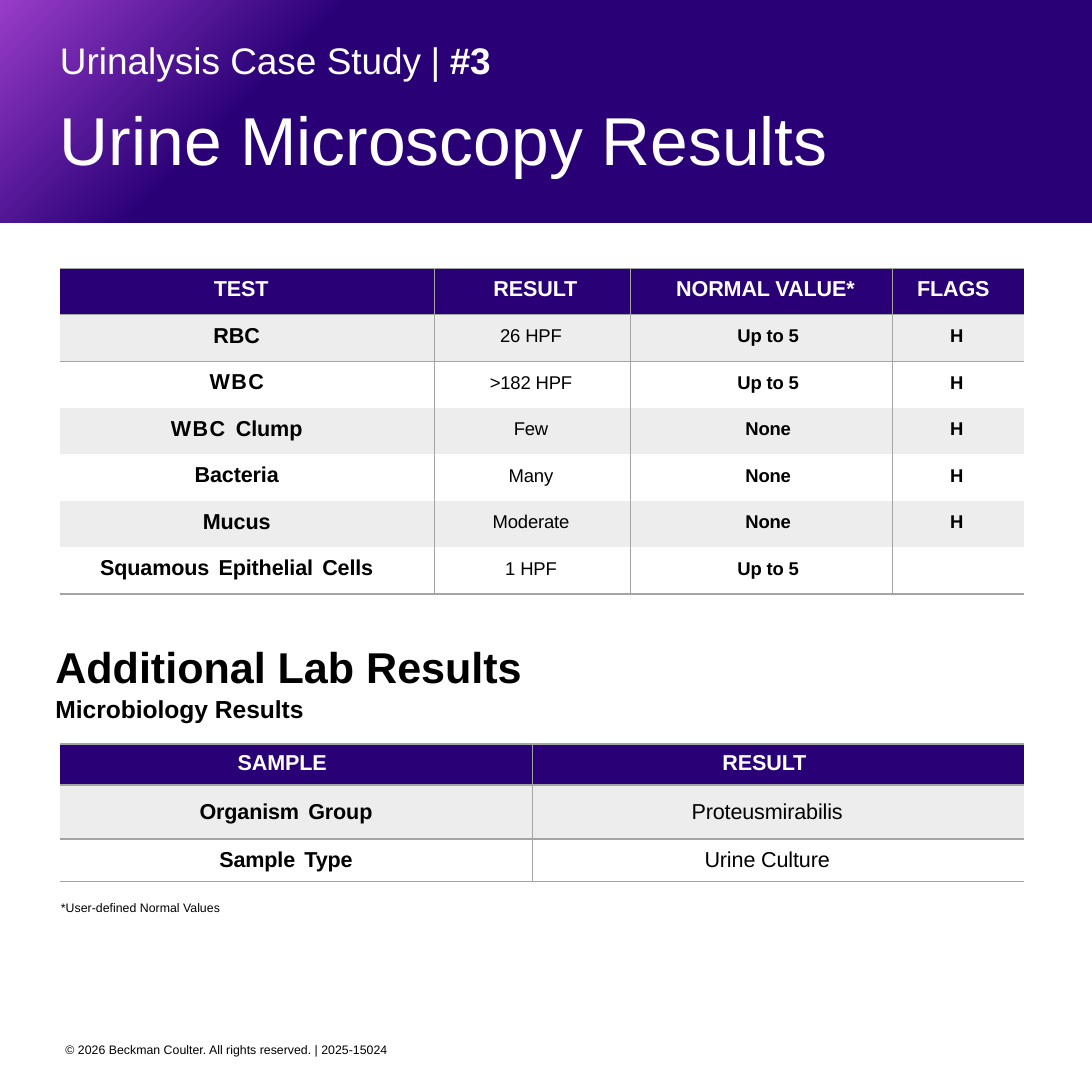
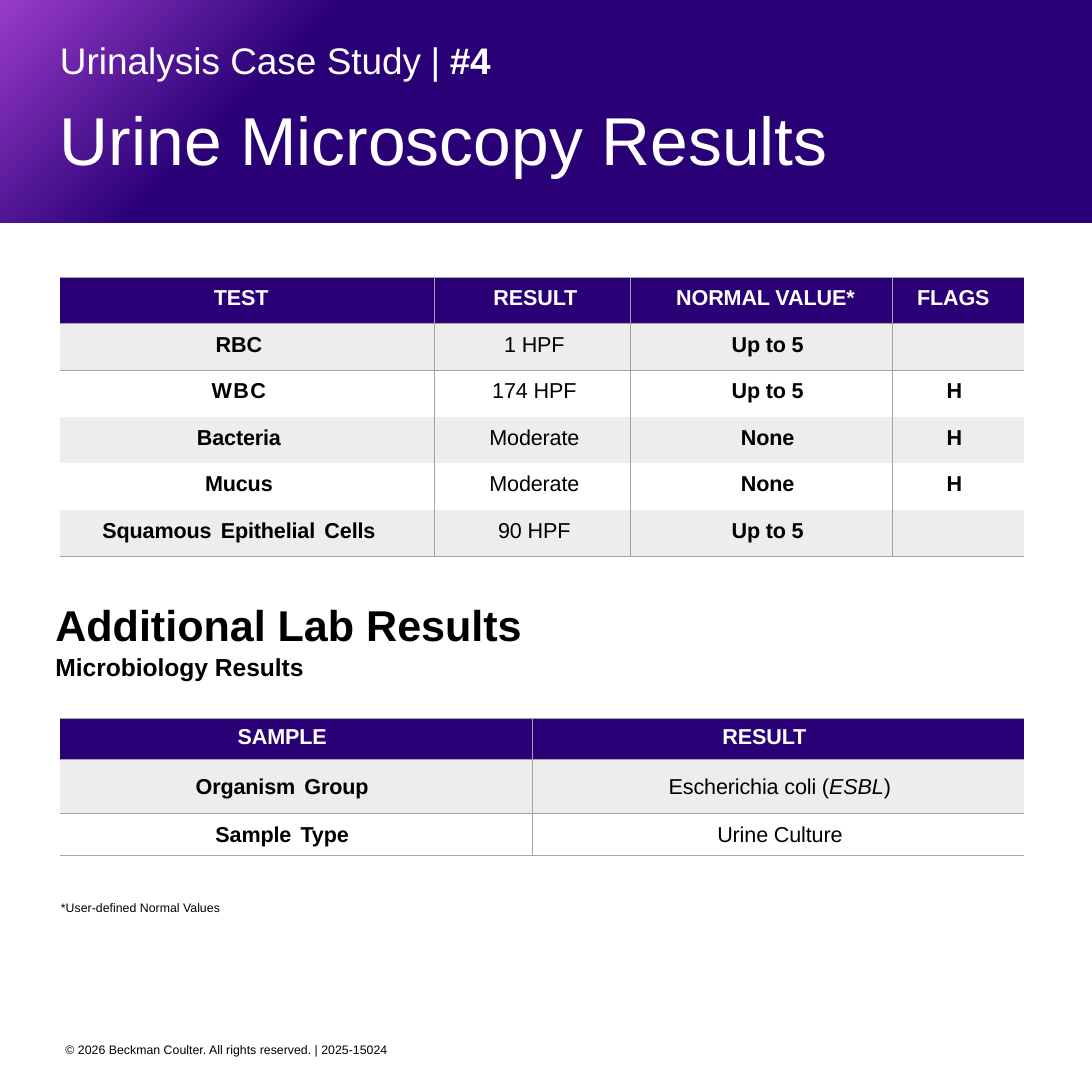
"""Build two urinalysis case study slides with lab result tables."""
from dataclasses import dataclass

from lxml import etree
from pptx import Presentation
from pptx import util as u
from pptx.dml.color import RGBColor
from pptx.enum import shapes, text
from pptx.oxml.ns import qn


@dataclass(frozen=True)
class Theme:
    font: str = "Arial"
    purple: str = "983CC9"
    indigo: str = "290076"
    white: str = "FFFFFF"
    black: str = "000000"
    stripe: str = "EDEDED"
    rule: str = "A4A4A4"
    title: float = 44
    kicker: float = 24
    heading: float = 28
    subheading: float = 16
    cell: float = 14
    small_cell: float = 12
    note: float = 8
    rule_width: float = 1
    divider_width: float = 0.5


THEME = Theme()
SIDE = 9.85
LEFT, WIDTH = 0.54, 8.7
BAND_HEIGHT = 2.01
TITLE = "Urine Microscopy Results"
KICKER = "Urinalysis Case Study"
HEADING = "Additional Lab Results"
SUBHEADING = "Microbiology Results"
NOTE = "*User-defined Normal Values"
FOOTER = "© 2026 Beckman Coulter. All rights reserved. | 2025-15024"

MICROSCOPY_HEADER = ["TEST", "RESULT", "NORMAL VALUE*", "FLAGS"]
MICROSCOPY_COLUMNS = [3.38, 1.77, 2.36, 1.19]
MICROSCOPY_ROW = 0.42
MICROSCOPY_HEADER_NUDGES = [-0.11, 0.05, 0.07, -0.09]
CULTURE_HEADER = ["SAMPLE", "RESULT"]
CULTURE_COLUMNS = [4.26, 4.44]
CULTURE_ROWS = [0.37, 0.49, 0.38]
CULTURE_HEADER_NUDGES = [-0.25, -0.25]
LETTER_SPACING = {"WBC": 0.9}
LABEL_GAP = 2

CASES = [
    {
        "number": "#3",
        "microscopy": [
            ["RBC", "26 HPF", "Up to 5", "H"],
            ["WBC", ">182 HPF", "Up to 5", "H"],
            ["WBC Clump", "Few", "None", "H"],
            ["Bacteria", "Many", "None", "H"],
            ["Mucus", "Moderate", "None", "H"],
            ["Squamous Epithelial Cells", "1 HPF", "Up to 5", ""],
        ],
        "microscopy_top": 2.42,
        "microscopy_size": THEME.small_cell,
        "microscopy_inset": 0.1,
        "microscopy_nudges": [-0.19, -0.03, 0.12, -0.03],
        "heading_top": 5.78,
        "culture": [["Organism Group", "Proteusmirabilis"], ["Sample Type", "Urine Culture"]],
        "culture_top": 6.71,
        "culture_nudges": [-0.18, -0.2],
    },
    {
        "number": "#4",
        "microscopy": [
            ["RBC", "1 HPF", "Up to 5", ""],
            ["WBC", "174 HPF", "Up to 5", "H"],
            ["Bacteria", "Moderate", "None", "H"],
            ["Mucus", "Moderate", "None", "H"],
            ["Squamous Epithelial Cells", "90 HPF", "Up to 5", ""],
        ],
        "microscopy_top": 2.5,
        "microscopy_size": THEME.cell,
        "microscopy_inset": 0.08,
        "microscopy_nudges": [-0.15, 0.03, 0.11, -0.07],
        "heading_top": 5.4,
        "culture": [
            ["Organism Group", [("Escherichia coli (", {}), ("ESBL", {"italic": True}), (")", {})]],
            ["Sample Type", "Urine Culture"],
        ],
        "culture_top": 6.48,
        "culture_nudges": [-0.25, 0.03],
    },
]


def apply(target, values):
    for name, value in values.items():
        setattr(target, name, value)


def write(paragraph, runs, size, color, bold=False, spacing=0):
    for words, changes in runs:
        run = paragraph.add_run()
        run.text = words
        values = {"name": THEME.font, "size": u.Pt(size), "bold": bold, **changes}
        tracking = values.pop("spacing", spacing)
        apply(run.font, values)
        run.font.color.rgb = RGBColor.from_string(color)
        run._r.get_or_add_rPr().set("spc", str(round(tracking * 100)))


def add_text(slide, box, paragraphs, anchor=text.MSO_ANCHOR.TOP):
    frame = slide.shapes.add_textbox(*map(u.Inches, box)).text_frame
    apply(frame, {"word_wrap": True, "vertical_anchor": anchor, "margin_left": 0,
                  "margin_right": 0, "margin_top": 0, "margin_bottom": 0})
    for index, (runs, size, color, bold) in enumerate(paragraphs):
        paragraph = frame.add_paragraph() if index else frame.paragraphs[0]
        if index:
            paragraph.space_before = u.Pt(0.8)
        write(paragraph, runs, size, color, bold)


def label_runs(label):
    runs = []
    for index, word in enumerate(label.split()):
        if index:
            runs.append((" ", {"spacing": LABEL_GAP}))
        runs.append((word, {"spacing": LETTER_SPACING.get(word, -0.1)}))
    return runs


def set_borders(cell, widths):
    properties = cell._tc.get_or_add_tcPr()
    for edge, width in widths.items():
        line = etree.SubElement(properties, qn(f"a:ln{edge}"), w=str(u.Pt(width)))
        if width:
            fill = etree.SubElement(line, qn("a:solidFill"))
            etree.SubElement(fill, qn("a:srgbClr"), val=THEME.rule)
        else:
            etree.SubElement(line, qn("a:noFill"))


def add_results(slide, top, columns, heights, rows, header, body):
    frame = slide.shapes.add_table(len(rows), len(columns), u.Inches(LEFT), u.Inches(top),
                                   u.Inches(WIDTH), u.Inches(sum(heights)))
    table = frame.table
    apply(table, {"first_row": False, "horz_banding": False})
    for column, width in zip(table.columns, columns):
        column.width = u.Inches(width)
    for row, height in zip(table.rows, heights):
        row.height = u.Inches(height)
    last_row, last_column = len(rows) - 1, len(columns) - 1
    for r, values in enumerate(rows):
        style = body if r else header
        for c, value in enumerate(values):
            cell = table.cell(r, c)
            nudge = style["nudges"][c]
            is_label = r > 0 and c == 0
            inset = header["inset"] if is_label and style["inset"] else style["inset"]
            apply(cell, {"margin_left": u.Inches(max(nudge, 0)),
                         "margin_right": u.Inches(max(-nudge, 0)),
                         "margin_top": u.Inches(inset), "margin_bottom": 0,
                         "vertical_anchor": style["anchor"]})
            set_borders(cell, {
                "L": THEME.divider_width if c else 0,
                "R": THEME.divider_width if c < last_column else 0,
                "T": THEME.rule_width if r < 3 else 0,
                "B": THEME.rule_width if r < 2 or r == last_row else 0,
            })
            if r % 2 and r:
                fill_color = THEME.stripe
            else:
                fill_color = None if r else THEME.indigo
            if fill_color:
                cell.fill.solid()
                cell.fill.fore_color.rgb = RGBColor.from_string(fill_color)
            else:
                cell.fill.background()
            paragraph = cell.text_frame.paragraphs[0]
            paragraph.alignment = text.PP_ALIGN.CENTER
            if value:
                runs = value if isinstance(value, list) else [(value, {})]
                write(paragraph, label_runs(value) if is_label else runs,
                      THEME.cell if is_label else style["size"],
                      THEME.black if r else THEME.white,
                      bold=c != 1 or r == 0, spacing=-0.1)


def add_frame(slide, number):
    band = slide.shapes.add_shape(shapes.MSO_SHAPE.RECTANGLE, 0, 0,
                                  u.Inches(SIDE), u.Inches(BAND_HEIGHT))
    band.shadow.inherit = False
    band.line.fill.background()
    band.fill.gradient()
    band.fill.gradient_angle = 315
    for stop, color, position in zip(band.fill.gradient_stops,
                                     (THEME.purple, THEME.indigo), (0, 0.27)):
        stop.color.rgb = RGBColor.from_string(color)
        stop.position = position
    add_text(slide, (LEFT, 0.67, WIDTH, 1.15),
             [([(TITLE, {})], THEME.title, THEME.white, False)], text.MSO_ANCHOR.MIDDLE)
    kicker = [(KICKER, {}), (" | ", {"spacing": -0.5}), (number, {"bold": True, "spacing": -0.2})]
    add_text(slide, (LEFT, 0.34, WIDTH, 0.4), [(kicker, THEME.kicker, THEME.white, False)])
    for words, left, top in ((NOTE, 0.55, 8.12), (FOOTER, 0.59, 9.4)):
        add_text(slide, (left, top, 5, 0.14), [([(words, {})], THEME.note, THEME.black, False)])


def add_case(slide, case):
    add_frame(slide, case["number"])
    rows = [MICROSCOPY_HEADER, *case["microscopy"]]
    top_anchor, middle = text.MSO_ANCHOR.TOP, text.MSO_ANCHOR.MIDDLE
    add_results(
        slide, case["microscopy_top"], MICROSCOPY_COLUMNS, [MICROSCOPY_ROW] * len(rows), rows,
        {"size": THEME.cell, "inset": 0.08, "anchor": top_anchor,
         "nudges": MICROSCOPY_HEADER_NUDGES},
        {"size": case["microscopy_size"], "inset": case["microscopy_inset"],
         "anchor": top_anchor, "nudges": case["microscopy_nudges"]})
    add_text(slide, (0.5, case["heading_top"], 7.04, 0.77),
             [([(HEADING, {})], THEME.heading, THEME.black, True),
              ([(SUBHEADING, {})], THEME.subheading, THEME.black, True)])
    add_results(
        slide, case["culture_top"], CULTURE_COLUMNS, CULTURE_ROWS,
        [CULTURE_HEADER, *case["culture"]],
        {"size": THEME.cell, "inset": 0.06, "anchor": top_anchor,
         "nudges": CULTURE_HEADER_NUDGES},
        {"size": THEME.cell, "inset": 0, "anchor": middle, "nudges": case["culture_nudges"]})


def main():
    presentation = Presentation()
    apply(presentation, {"slide_width": u.Inches(SIDE), "slide_height": u.Inches(SIDE)})
    for case in CASES:
        add_case(presentation.slides.add_slide(presentation.slide_layouts[6]), case)
    presentation.save("out.pptx")


if __name__ == "__main__":
    main()
